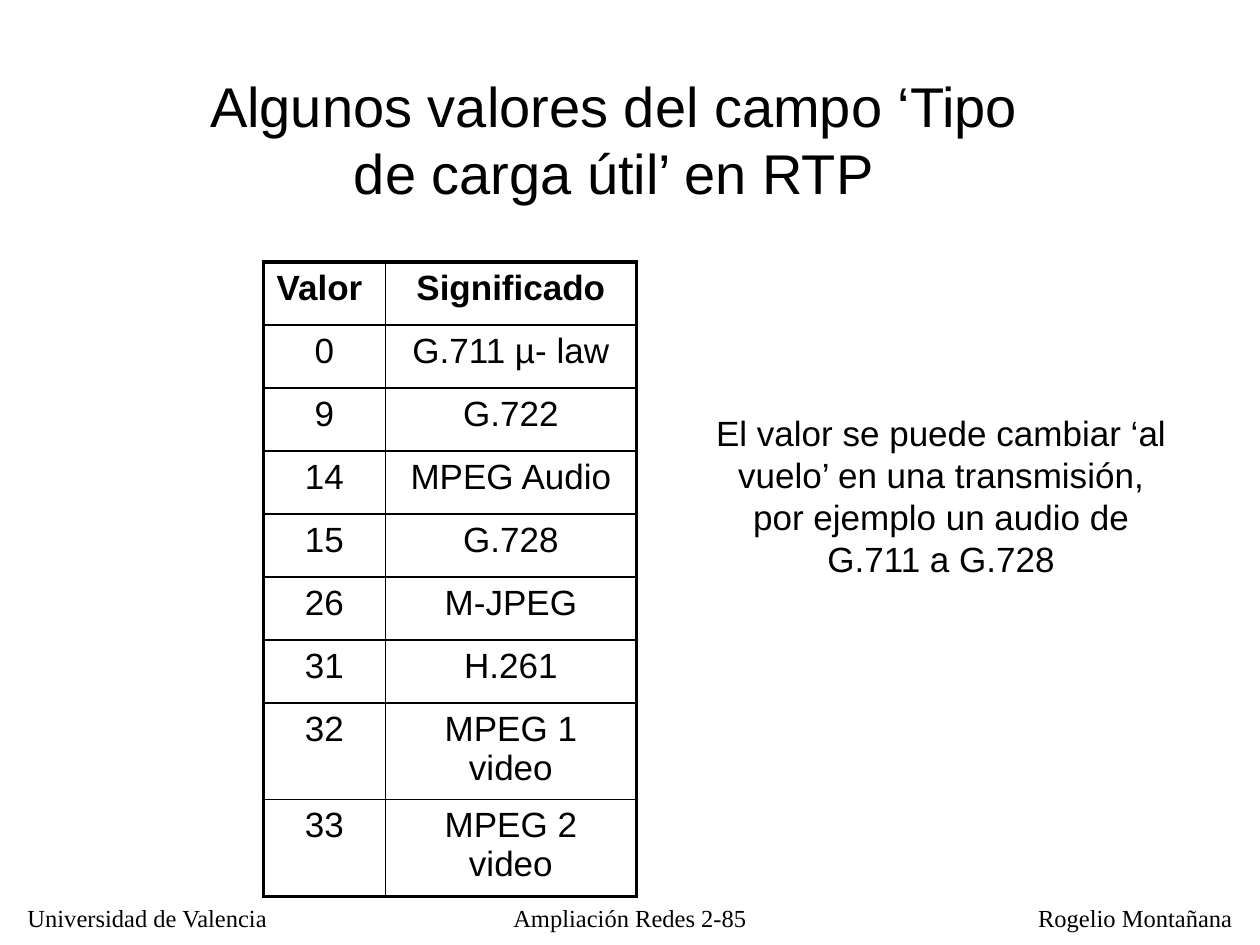
from lxml.etree import SubElement
from pptx import Presentation
from pptx.dml.color import RGBColor
from pptx.enum.text import MSO_AUTO_SIZE, PP_ALIGN
from pptx.oxml.ns import qn
from pptx.util import Inches, Pt

BLACK = RGBColor(0, 0, 0)
THIN, THICK = Pt(1), Pt(2.25)
LEFT, CENTER = PP_ALIGN.LEFT, PP_ALIGN.CENTER
FIT, FIXED = MSO_AUTO_SIZE.SHAPE_TO_FIT_TEXT, MSO_AUTO_SIZE.NONE

TEXTS = [
    ("Universidad de Valencia", (0.12, 7.12, 2.13, 0.33), 14, "Times New Roman", LEFT, False, FIT),
    ("Rogelio Montañana", (8.14, 7.12, 1.74, 0.33), 14, "Times New Roman", LEFT, False, FIT),
    ("Ampliación Redes 2-85", (3.9, 7.12, 2.2, 0.31), 14, "Times New Roman", CENTER, True, FIXED),
    ("Algunos valores del campo ‘Tipo de carga útil’ en RTP",
     (1.36, 0.52, 7.03, 1.17), 32, "Arial", CENTER, True, FIT),
    ("El valor se puede cambiar ‘al vuelo’ en una transmisión, por ejemplo un audio de G.711 a G.728",
     (5.53, 3.22, 3.88, 1.43), 20, "Arial", CENTER, True, FIT),
]
ROWS = [
    ("Valor ", "Significado"),
    ("0", "G.711 µ- law"),
    ("9", "G.722"),
    ("14", "MPEG Audio"),
    ("15", "G.728"),
    ("26", "M-JPEG"),
    ("31", "H.261"),
    ("32", "MPEG 1 video"),
    ("33", "MPEG 2 video"),
]
COL_WIDTHS = (0.97, 1.99)
ROW_HEIGHT = 0.5


def write(tf, text, size, font, align, bold=False):
    tf.text = text
    p = tf.paragraphs[0]
    p.alignment = align
    f = p.runs[0].font
    f.size, f.name, f.bold = Pt(size), font, bold
    f.color.rgb = BLACK


def set_borders(cell, widths):
    tcPr = cell._tc.get_or_add_tcPr()
    for side, width in widths.items():
        ln = SubElement(tcPr, qn(f"a:ln{side}"), w=str(width))
        fill = SubElement(ln, qn("a:solidFill"))
        SubElement(fill, qn("a:srgbClr"), val=str(BLACK))


prs = Presentation()
prs.slide_width, prs.slide_height = Inches(10), Inches(7.5)
s = prs.slides.add_slide(prs.slide_layouts[6])

for text, box, size, font, align, wrap, fit in TEXTS:
    tf = s.shapes.add_textbox(*map(Inches, box)).text_frame
    tf.word_wrap = wrap
    tf.auto_size = fit
    write(tf, text, size, font, align)

table = s.shapes.add_table(
    len(ROWS), len(COL_WIDTHS), Inches(2.09), Inches(2.08),
    Inches(sum(COL_WIDTHS)), Inches(ROW_HEIGHT * len(ROWS))).table
table.first_row = table.horz_banding = False
for col, width in zip(table.columns, COL_WIDTHS):
    col.width = Inches(width)
last_row, last_col = len(ROWS) - 1, len(COL_WIDTHS) - 1
for i, row in enumerate(ROWS):
    table.rows[i].height = Inches(ROW_HEIGHT)
    for j, text in enumerate(row):
        cell = table.cell(i, j)
        write(cell.text_frame, text, 20, "Arial", CENTER, bold=i == 0)
        set_borders(cell, {
            "L": THICK if j == 0 else THIN,
            "R": THICK if j == last_col else THIN,
            "T": THICK if i == 0 else THIN,
            "B": THICK if i == last_row else THIN,
        })
        cell.fill.background()

prs.save("out.pptx")
